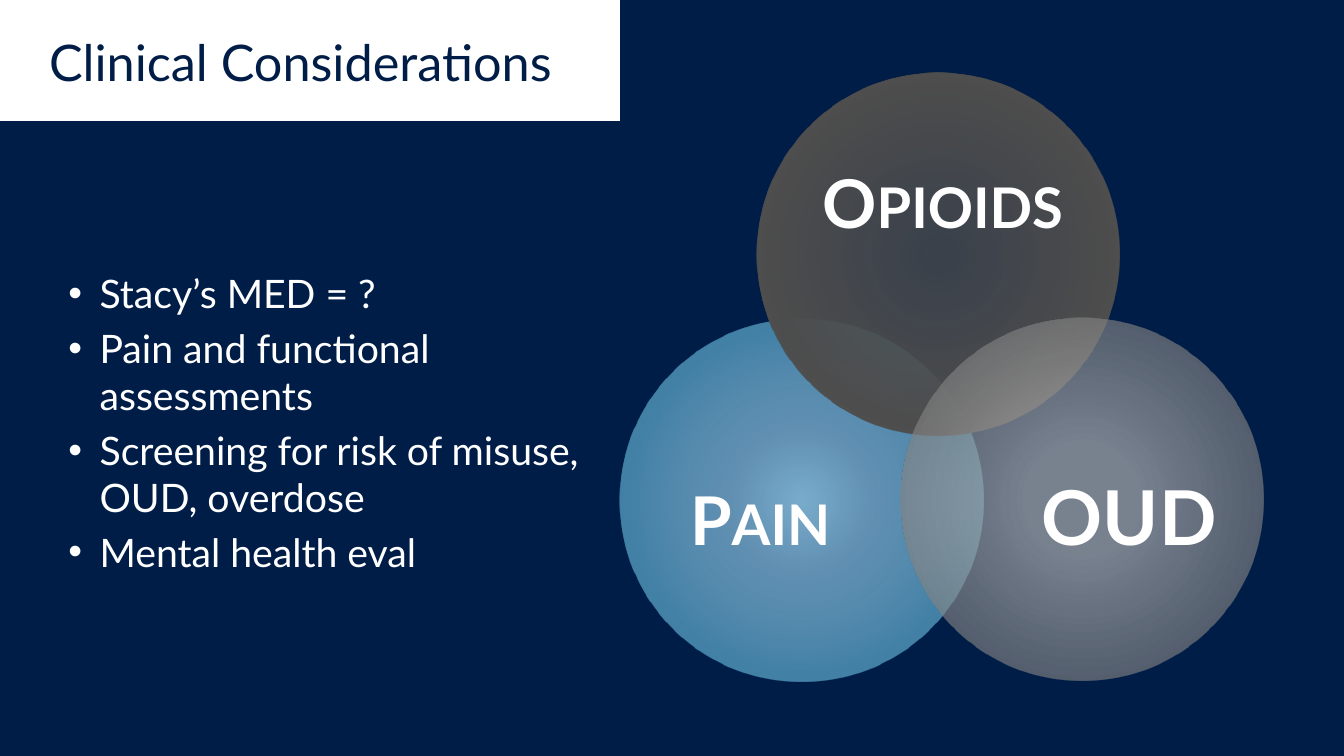
from pptx import Presentation
from pptx.dml.color import RGBColor
from pptx.enum.shapes import MSO_SHAPE as SHAPE
from pptx.enum.text import MSO_ANCHOR as ANCHOR, PP_ALIGN as ALIGN
from pptx.oxml import parse_xml
from pptx.oxml.ns import nsdecls, qn
from pptx.util import Pt

PX = 9144  # 100 px to the inch
NAVY = RGBColor(0x00, 0x1D, 0x48)
WHITE = RGBColor(0xFF, 0xFF, 0xFF)
SKY = RGBColor(0x79, 0xAC, 0xCC)
STEEL = RGBColor(0x42, 0x80, 0xA5)
CHARCOAL = RGBColor(0x4D, 0x4D, 0x4D)
DIM_GREY = RGBColor(0x5F, 0x5F, 0x5F)
SILVER = RGBColor(0xB2, 0xB2, 0xB2)
MID_GREY = RGBColor(0x85, 0x85, 0x85)
DARK_GREY = RGBColor(0x58, 0x58, 0x58)

DIAMETER = 360
# Circle offset, (position, colour, opacity) stops, label box in the circle, label runs
CIRCLES = [
    ((0, 244), [(0, SKY, 100), (27, SKY, 80), (68, STEEL, 100), (100, STEEL, 100)],
     (31, 105, 216, 198), [("P", 48), ("AIN", 40)]),
    ((135, 0), [(0, CHARCOAL, 74), (68, CHARCOAL, 100), (99, DIM_GREY, 100)],
     (53, 52, 264, 162), [("O", 48), ("PIOIDS", 40)]),
    ((278, 243), [(0, SILVER, 67), (22, SILVER, 67), (69, MID_GREY, 63), (97, DARK_GREY, 90)],
     (119, 103, 216, 198), [("OUD", 54)]),
]
CONSIDERATIONS = [
    "Stacy’s MED = ?",
    "Pain and functional assessments",
    "Screening for risk of misuse, OUD, overdose",
    "Mental health eval",
]


def emu(*lengths):
    return [n * PX for n in lengths]


def add_shape(slide, kind, box):
    s = slide.shapes.add_shape(kind, *emu(*box))
    s.shadow.inherit = False
    s.line.fill.background()
    return s


def add_text(slide, box, inset=0, anchor=ANCHOR.TOP):
    tf = slide.shapes.add_textbox(*emu(*box)).text_frame
    tf.word_wrap = True
    tf.vertical_anchor = anchor
    for side in ("left", "right", "top", "bottom"):
        setattr(tf, f"margin_{side}", inset * PX)
    return tf


def add_run(p, text, size, color, bold=False):
    r = p.add_run()
    r.text = text
    for name, value in dict(name="Lato", size=Pt(size), bold=bold).items():
        setattr(r.font, name, value)
    r.font.color.rgb = color


def fill_radial(s, stops):
    """Fill with a circular gradient of translucent stops."""
    gs = "".join(
        f'<a:gs pos="{pos * 1000}"><a:srgbClr val="{color}">'
        f'<a:alpha val="{opacity * 1000}"/></a:srgbClr></a:gs>'
        for pos, color, opacity in stops)
    s.fill.gradient()
    props = s._element.spPr
    props.replace(props.find(qn("a:gradFill")), parse_xml(
        f'<a:gradFill {nsdecls("a")} rotWithShape="1"><a:gsLst>{gs}</a:gsLst>'
        '<a:path path="circle"><a:fillToRect l="50000" t="50000" r="50000" b="50000"/>'
        '</a:path></a:gradFill>'))


def add_title(slide, box):
    x, y, w, h = box
    panel = add_shape(slide, SHAPE.RECTANGLE, box)
    panel.fill.solid()
    panel.fill.fore_color.rgb = WHITE
    p = add_text(slide, (x + 12, y + 43, w - 42, 47)).paragraphs[0]
    p.alignment = ALIGN.CENTER
    p.line_spacing = Pt(34.6)
    add_run(p, "Clinical Considerations", 36, NAVY)


def add_bullets(slide, box):
    tf = add_text(slide, box)
    tf.margin_left, tf.margin_right, tf.margin_top, tf.margin_bottom = emu(10, 10, 5, 5)
    for i, text in enumerate(CONSIDERATIONS):
        p = tf.add_paragraph() if i else tf.paragraphs[0]
        props = p._p.get_or_add_pPr()
        props.set("marL", str(31 * PX))
        props.set("indent", str(-31 * PX))
        props.append(parse_xml(f'<a:buFont {nsdecls("a")} typeface="Arial"/>'))
        props.append(parse_xml(f'<a:buChar {nsdecls("a")} char="•"/>'))
        p.space_before = Pt(5.6 if i else 0)
        add_run(p, text, 28, WHITE)


def add_venn(slide, left, top):
    for (dx, dy), stops, (tx, ty, tw, th), runs in CIRCLES:
        x, y = left + dx, top + dy
        circle = add_shape(slide, SHAPE.OVAL, (x, y, DIAMETER, DIAMETER))
        fill_radial(circle, stops)
        p = add_text(slide, (x + tx, y + ty, tw, th), anchor=ANCHOR.MIDDLE).paragraphs[0]
        p.alignment = ALIGN.CENTER
        p.line_spacing = 0.9
        for text, size in runs:
            add_run(p, text, size, WHITE, bold=True)


def main():
    prs = Presentation()
    prs.slide_width, prs.slide_height = emu(1333, 750)
    slide = prs.slides.add_slide(prs.slide_layouts[6])
    slide.background.fill.solid()
    slide.background.fill.fore_color.rgb = NAVY
    add_title(slide, (-1, 0, 616, 120))
    add_bullets(slide, (58, 262, 528, 390))
    add_venn(slide, 615, 72)
    prs.save("out.pptx")


if __name__ == "__main__":
    main()
